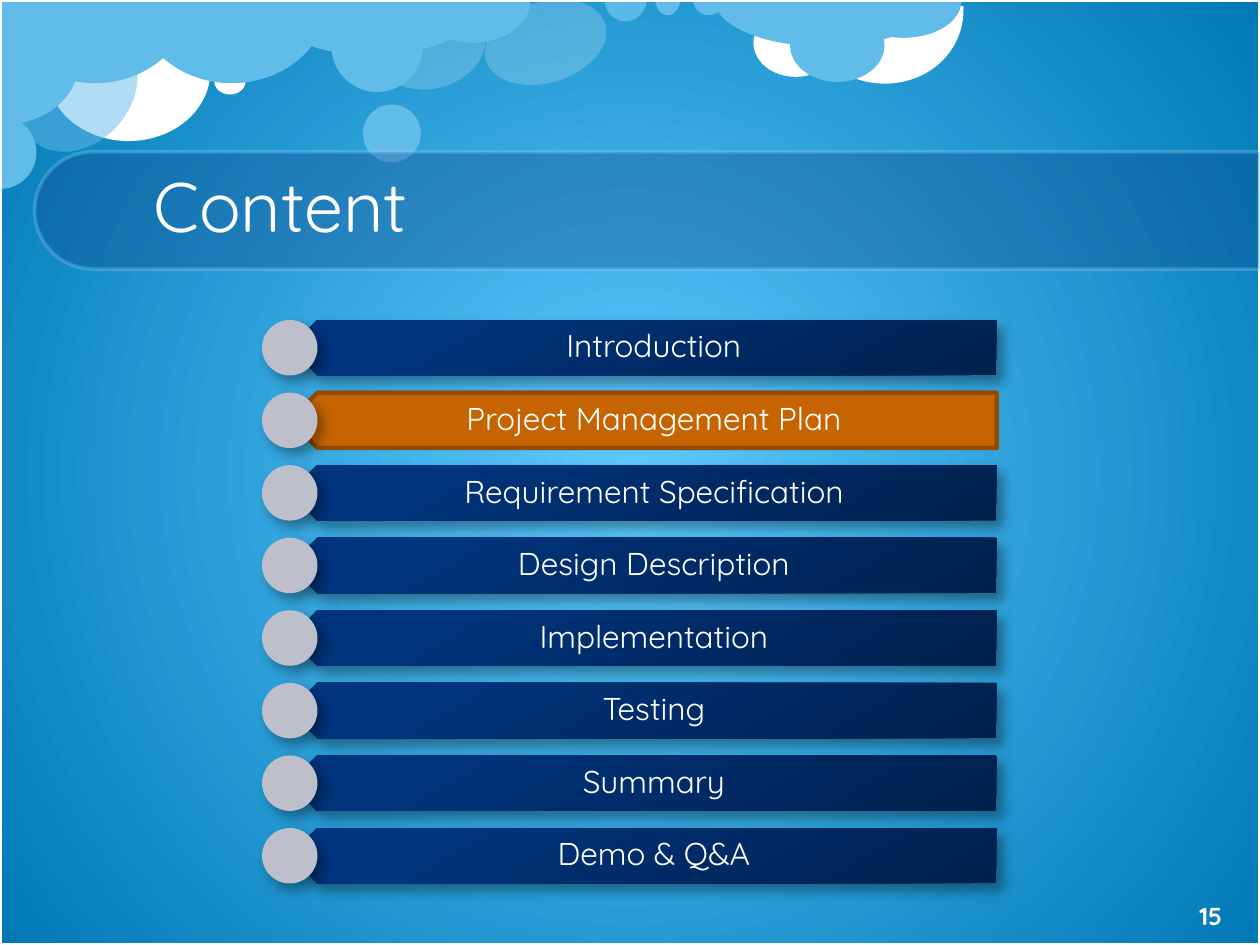
"""Build the Content agenda slide with its cloud banner and highlighted chapter."""
from lxml.etree import SubElement
from pptx import Presentation
from pptx.dml.color import RGBColor
from pptx.enum.shapes import MSO_SHAPE
from pptx.enum.text import MSO_ANCHOR, PP_ALIGN
from pptx.oxml import parse_xml
from pptx.oxml.ns import nsdecls, qn
from pptx.util import Emu, Inches, Pt

TITLE = "Content"
PAGE_NUMBER = "15"
CHAPTERS = ["Introduction", "Project Management Plan", "Requirement Specification",
            "Design Description", "Implementation", "Testing", "Summary", "Demo & Q&A"]
CURRENT = "Project Management Plan"
FONT = "Quicksand"
COLORS = {"white": "FFFFFF", "cloud": "62BCE9", "pale": "8FD9FB", "banner": "073779",
          "current": "C76402", "current_edge": "934A01", "dot": "BDBFCB", "shadow": "000000"}
SKY = [(0, "5DC9FF"), (100, "0079B5")]
NAVY = [(0, "00204C"), (80, "00347C"), (100, "00347D")]
OVAL, PIE, ARC = MSO_SHAPE.OVAL, MSO_SHAPE.PIE, MSO_SHAPE.ARC
HALF, CUT = (0, 108), (0, 107.77)
WEDGE = (151.8, 44.48)
WIDTH, HEIGHT = Inches(10), Inches(7.5)
UNIT = WIDTH / 100

CLOUDS = [
    (OVAL, (31.1, -0.5, 6.4, 8.6), 72.8, (), "white", 20),
    (OVAL, (3.7, 0.1, 13, 11.1), 0, (), "white", 100),
    (ARC, (63.9, -6, 12.1, 13.1), 106.5, WEDGE, "white", 100),
    (OVAL, (59.8, 0.7, 6.7, 5.4), 0, (), "white", 100),
    (PIE, (-0.1, -6.6, 15.2, 13.2), 0, HALF, "cloud", 100),
    (PIE, (20.8, -4.4, 17.5, 8.8), 0, HALF, "cloud", 100),
    (OVAL, (28.8, 8.3, 4.6, 4.6), 0, (), "cloud", 100),
    (OVAL, (1.9, 1.8, 8.5, 10.7), 41.8, (), "cloud", 50),
    (PIE, (-2.9, 9.2, 5.8, 5.8), 270, CUT, "cloud", 100),
    (OVAL, (17, 5.4, 2.5, 2.1), 0, (), "white", 100),
    (PIE, (10.8, -6.6, 15.2, 13.2), 0, HALF, "cloud", 100),
    (PIE, (56.7, -3.8, 17.5, 7.5), 0, HALF, "cloud", 100),
    (OVAL, (62.7, 0.7, 7.5, 5.8), 0, (), "cloud", 100),
    (PIE, (67.1, -2.8, 9.2, 5.8), 0, HALF, "cloud", 100),
    (OVAL, (40.1, -1.6, 6.4, 9.9), 72.8, (), "white", 20),
    (PIE, (48, -1.6, 3.3, 3.3), 0, CUT, "pale", 50),
    (PIE, (52, -1.3, 2, 2.5), 0, CUT, "cloud", 100),
    (PIE, (55, -1.3, 2.5, 2.5), 0, CUT, "cloud", 100),
    (OVAL, (26.3, 0, 7.3, 7.3), 0, (), "cloud", 100),
    (PIE, (32.9, -3.3, 9.2, 6.7), 0, HALF, "cloud", 100),
    (PIE, (-4.7, -0.9, 9.3, 12.4), 270, HALF, "cloud", 100),
]
ROW_TOP, ROW_PITCH, ROW_HEIGHT = 25.4, 5.76, 4.4


def place(box):
    return [Emu(round(value * UNIT)) for value in box]


def paint(fill, owner, color, alpha=100):
    fill.solid()
    fill.fore_color.rgb = RGBColor.from_string(COLORS[color])
    if alpha < 100:
        tint = owner.xpath("./a:solidFill/a:srgbClr")[0]
        SubElement(tint, qn("a:alpha"), val=str(alpha * 1000))


def blend(fill, owner, stops, direction):
    fill.solid()
    marks = "".join(f'<a:gs pos="{share * 1000}"><a:srgbClr val="{color}"/></a:gs>'
                    for share, color in stops)
    gradient = parse_xml(f'<a:gradFill {nsdecls("a")} rotWithShape="0">'
                         f'<a:gsLst>{marks}</a:gsLst>{direction}</a:gradFill>')
    owner.replace(owner.xpath("./a:solidFill")[0], gradient)


def add_form(page, kind, box, color=None, alpha=100, turn=0, adjust=(), edge=None):
    shape = page.shapes.add_shape(kind, *place(box))
    shape.shadow.inherit = False
    shape.rotation = turn
    for index, value in enumerate(adjust):
        shape.adjustments[index] = value
    if color:
        paint(shape.fill, shape.element.spPr, color, alpha)
    else:
        shape.fill.background()
    if edge:
        edge_color, points, edge_alpha = edge
        shape.line.width = Pt(points)
        paint(shape.line.fill, shape.element.spPr.find(qn("a:ln")), edge_color, edge_alpha)
    else:
        shape.line.fill.background()
    return shape


def cast_shadow(shape):
    effects = shape.element.spPr.find(qn("a:effectLst"))
    shadow = SubElement(effects, qn("a:outerShdw"), blurRad=str(Pt(7)), dist=str(Pt(5)),
                        dir=str(50 * 60000), algn="tl", rotWithShape="0")
    tint = SubElement(shadow, qn("a:srgbClr"), val=COLORS["shadow"])
    SubElement(tint, qn("a:alpha"), val="35000")


def add_label(page, text, box, size, align, bold=False, spacing=None, insets=None):
    frame = page.shapes.add_textbox(*place(box)).text_frame
    frame.word_wrap = True
    frame.vertical_anchor = MSO_ANCHOR.MIDDLE
    if insets:
        (frame.margin_left, frame.margin_top,
         frame.margin_right, frame.margin_bottom) = place(insets)
    para = frame.paragraphs[0]
    para.alignment = align
    if spacing:
        para.line_spacing = spacing
    span = para.add_run()
    span.text = text
    span.font.name = FONT
    span.font.size = Pt(size)
    span.font.bold = bold
    span.font.color.rgb = RGBColor.from_string(COLORS["white"])


def add_chapter(page, row, chapter):
    top = ROW_TOP + row * ROW_PITCH
    current = chapter == CURRENT
    edge = ("current_edge", 2.5, 100) if current else None
    bar = add_form(page, MSO_SHAPE.PENTAGON, (23, top, 56.1, ROW_HEIGHT),
                   "current", turn=180, edge=edge)
    if not current:
        blend(bar.fill, bar.element.spPr, NAVY, f'<a:lin ang="{240 * 60000}" scaled="0"/>')
        cast_shadow(bar)
    add_label(page, chapter, (24.1, top, 55, ROW_HEIGHT), 18, PP_ALIGN.CENTER,
              spacing=0.9, insets=(2, 0.7, 1.4, 0.7))
    cast_shadow(add_form(page, OVAL, (20.8, top, ROW_HEIGHT, ROW_HEIGHT), "dot"))


def main():
    deck = Presentation()
    deck.slide_width, deck.slide_height = WIDTH, HEIGHT
    page = deck.slides.add_slide(deck.slide_layouts[6])
    sky = page.background.fill
    sky.solid()
    blend(sky, page.element.xpath(".//p:bgPr")[0], SKY,
          '<a:path path="circle"><a:fillToRect l="50000" t="50000" r="50000" b="50000"/></a:path>')
    for kind, box, turn, adjust, color, alpha in CLOUDS:
        add_form(page, kind, box, color, alpha, turn, adjust)
    add_form(page, MSO_SHAPE.RECTANGLE, (0, 0, 100, 75), edge=("white", 2, 100))
    add_form(page, MSO_SHAPE.ROUND_2_SAME_RECTANGLE, (46.7, -31.9, 9.3, 97.2), "banner", 30,
             turn=270, adjust=(0.5, 0), edge=("pale", 2, 30))
    add_label(page, TITLE, (11.2, 11.8, 81, 7.8), 40, PP_ALIGN.LEFT, spacing=Pt(56))
    for row, chapter in enumerate(CHAPTERS):
        add_chapter(page, row, chapter)
    add_label(page, PAGE_NUMBER, (92.2, 70.5, 7.8, 4.3), 14, PP_ALIGN.CENTER, bold=True)
    deck.save("out.pptx")


if __name__ == "__main__":
    main()
